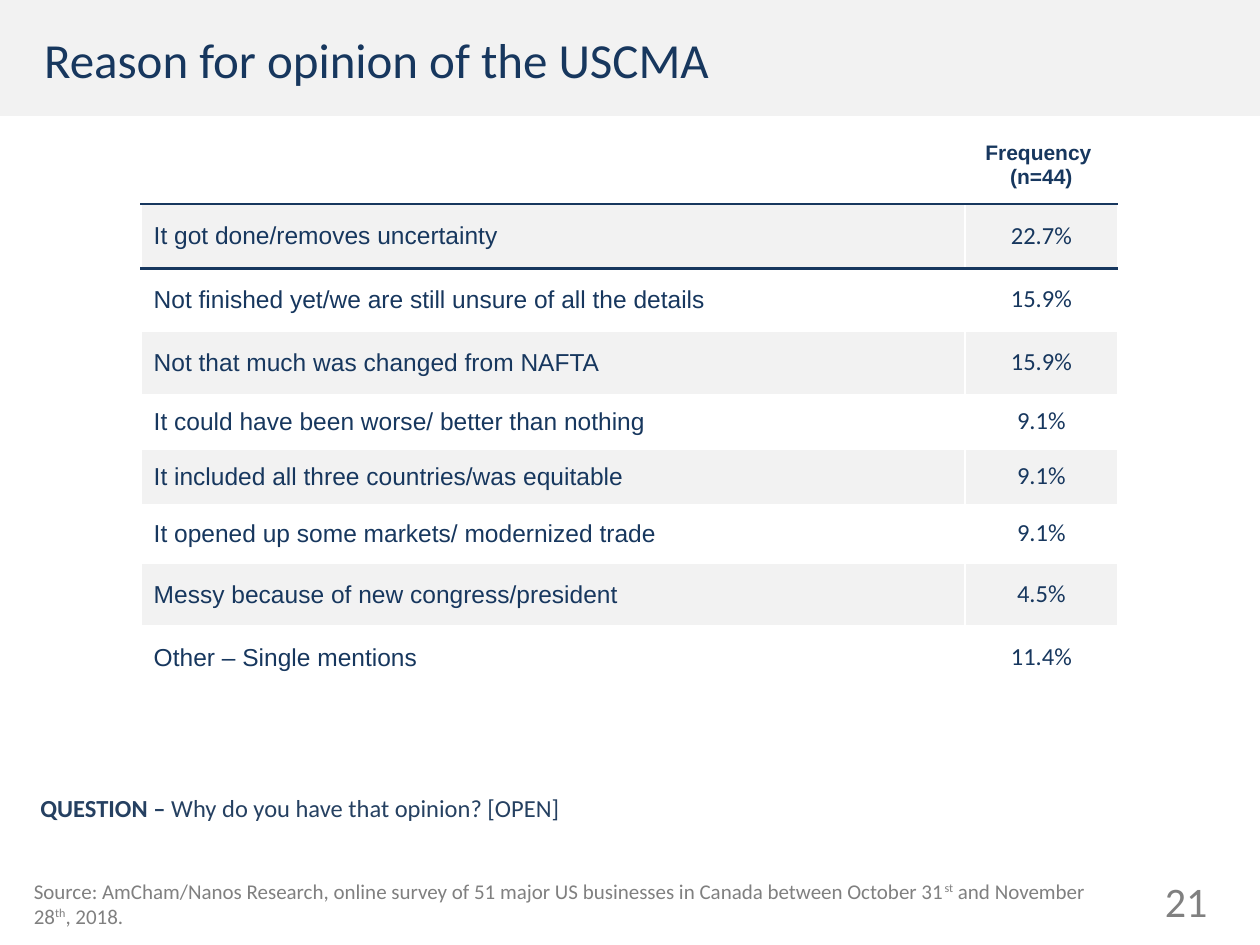
from lxml.etree import SubElement
from pptx import Presentation
from pptx.dml.color import RGBColor
from pptx.enum.shapes import MSO_SHAPE
from pptx.enum.text import MSO_ANCHOR, PP_ALIGN
from pptx.oxml.ns import qn
from pptx.util import Inches, Pt

NAVY = RGBColor(0x17, 0x37, 0x5E)
SLATE = RGBColor(0x25, 0x40, 0x61)
GRAY = RGBColor(0x80, 0x80, 0x80)
BAND = RGBColor(0xF2, 0xF2, 0xF2)
WHITE = RGBColor(0xFF, 0xFF, 0xFF)

REASONS = [
    ("It got done/removes uncertainty", "22.7%"),
    ("Not finished yet/we are still unsure of all the details", "15.9%"),
    ("Not that much was changed from NAFTA", "15.9%"),
    ("It could have been worse/ better than nothing", "9.1%"),
    ("It included all three countries/was equitable", "9.1%"),
    ("It opened up some markets/ modernized trade", "9.1%"),
    ("Messy because of new congress/president", "4.5%"),
    ("Other – Single mentions", "11.4%"),
]
COL_WIDTHS = [6.54, 1.21]
ROW_HEIGHTS = [0.62, 0.51, 0.5, 0.5, 0.44, 0.44, 0.46, 0.5, 0.5]


def add_run(p, text, size, color, font="Calibri", bold=False, raised=False):
    r = p.add_run()
    r.text = text
    r.font.size = Pt(size)
    r.font.name = font
    r.font.bold = bold
    r.font.color.rgb = color
    if raised:
        r.font._element.set("baseline", "30000")


def add_border(cell, side, color, width):
    ln = SubElement(cell._tc.get_or_add_tcPr(), qn(f"a:ln{side}"), w=str(Pt(width)))
    SubElement(SubElement(ln, qn("a:solidFill")), qn("a:srgbClr"), val=str(color))


prs = Presentation()
prs.slide_width, prs.slide_height = Inches(10), Inches(7.5)
s = prs.slides.add_slide(prs.slide_layouts[5])

# Title band, with the title in front of it
band = s.shapes.add_shape(MSO_SHAPE.RECTANGLE, 0, 0, prs.slide_width, Inches(0.92))
band.shadow.inherit = False
band.fill.solid()
band.fill.fore_color.rgb = BAND
band.line.fill.background()

title = s.shapes.title
s.shapes._spTree.append(title._element)
title.left, title.top = Inches(0.25), Inches(0.01)
title.width, title.height = Inches(6.55), Inches(0.91)
title.text_frame.vertical_anchor = MSO_ANCHOR.MIDDLE
p = title.text_frame.paragraphs[0]
p.alignment = PP_ALIGN.LEFT
add_run(p, "Reason for opinion of the USCMA", 28, NAVY)

# Table of reasons
table = s.shapes.add_table(len(ROW_HEIGHTS), len(COL_WIDTHS), Inches(1.12), Inches(1),
                           Inches(sum(COL_WIDTHS)), Inches(sum(ROW_HEIGHTS))).table
table.first_row = table.horz_banding = False
for column, width in zip(table.columns, COL_WIDTHS):
    column.width = Inches(width)
for row, height in zip(table.rows, ROW_HEIGHTS):
    row.height = Inches(height)

RULES = {1: (NAVY, 1.5), 2: (NAVY, 2.25)}  # dark lines above these rows
for i, row in enumerate(table.rows):
    for j, cell in enumerate(row.cells):
        for side, edge in (("L", None), ("R", None), ("T", i), ("B", i + 1)):
            add_border(cell, side, *RULES.get(edge, (WHITE, 1)))
        if i % 2:
            cell.fill.solid()
            cell.fill.fore_color.rgb = BAND
        else:
            cell.fill.background()
        cell.vertical_anchor = MSO_ANCHOR.MIDDLE
        tf = cell.text_frame
        p = tf.paragraphs[0]
        if j == 1:
            p.alignment = PP_ALIGN.CENTER
        if i > 0:
            add_run(p, REASONS[i - 1][j], 14, NAVY, "Calibri" if j else "Arial")
        elif j == 1:
            add_run(p, "Frequency ", 12, NAVY, "Arial", bold=True)
            p = tf.add_paragraph()
            p.alignment = PP_ALIGN.CENTER
            add_run(p, "(n=44)", 12, NAVY, "Arial", bold=True)
        if i > 1 and j == 1:
            cell.margin_left = cell.margin_right = cell.margin_top = cell.margin_bottom = 0
            p.line_spacing = Pt(16)

# Question, source and page number
tf = s.shapes.add_textbox(Inches(0.25), Inches(6.25), Inches(9.75), Inches(0.31)).text_frame
tf.word_wrap = True
tf.margin_left = tf.margin_right = Inches(0.07)
tf.margin_top = tf.margin_bottom = Inches(0.04)
p = tf.paragraphs[0]
add_run(p, "QUESTION – ", 14, SLATE, bold=True)
add_run(p, "Why do you have that opinion? [OPEN]", 14, SLATE)

tf = s.shapes.add_textbox(Inches(0.17), Inches(6.92), Inches(8.83), Inches(0.4)).text_frame
tf.word_wrap = True
p = tf.paragraphs[0]
for text, raised in [
    ("Source: AmCham/Nanos Research, online survey of 51 major US businesses "
     "in Canada between October 31", False),
    ("st", True),
    (" and November 28", False),
    ("th", True),
    (", 2018.", False),
]:
    add_run(p, text, 12, GRAY, raised=raised)

tf = s.shapes.add_textbox(Inches(9), Inches(6.95), Inches(0.68), Inches(0.4)).text_frame
tf.word_wrap = True
tf.vertical_anchor = MSO_ANCHOR.MIDDLE
p = tf.paragraphs[0]
p.alignment = PP_ALIGN.RIGHT
add_run(p, "21", 24, GRAY)

prs.save("out.pptx")
